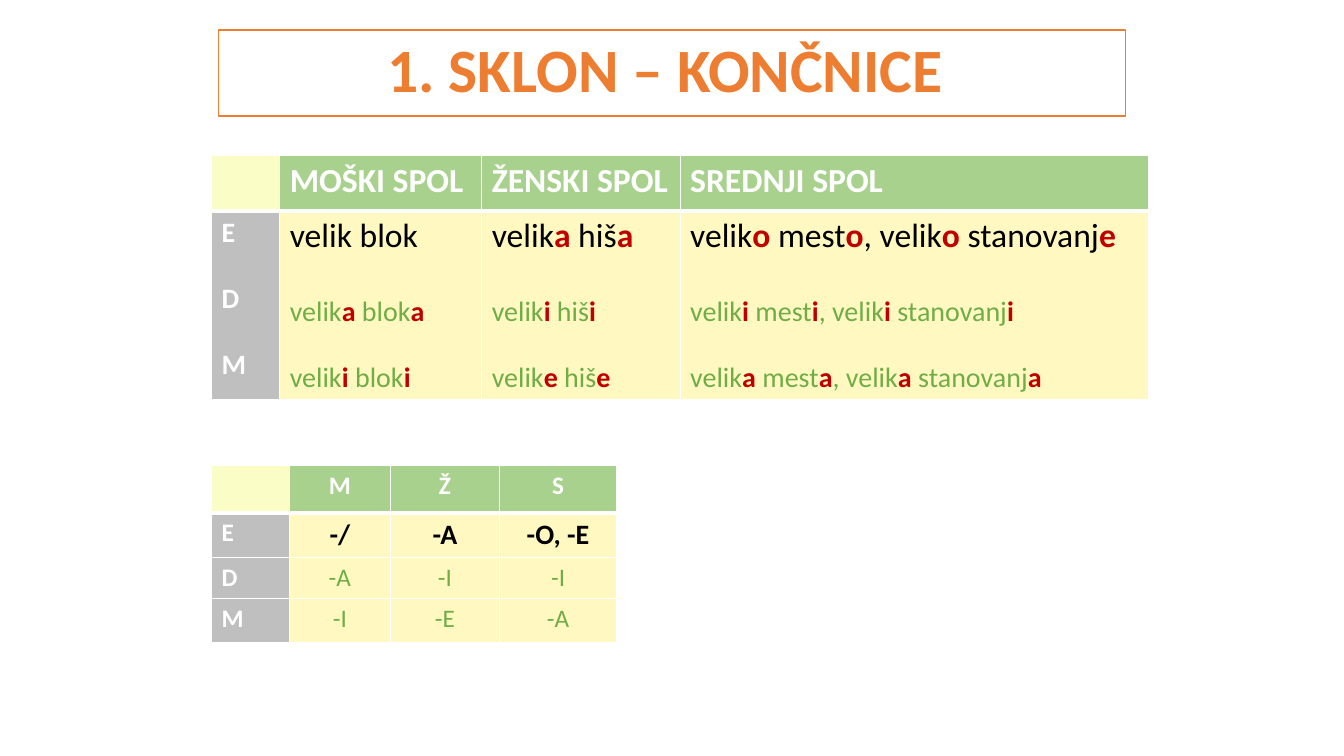
from lxml.etree import SubElement as Sub
from pptx import Presentation as Deck
from pptx.dml.color import RGBColor as Rgb
from pptx.enum.text import MSO_ANCHOR as Anchor, MSO_AUTO_SIZE as Fit, PP_ALIGN as Align
from pptx.oxml.ns import qn
from pptx.util import Cm, Pt

HUES = {
    "white": "FFFFFF", "black": "000000", "orange": "ED7D31", "red": "C00000",
    "green": "70AD47", "head": "A9D18E", "side": "BFBFBF", "body": "FFF8C1",
    "corner": "FAFEC6",
}
CASES = [
    ["", "MOŠKI SPOL", "ŽENSKI SPOL", "SREDNJI SPOL"],
    ["E\nD\nM",
     "velik blok\nvelik*a* blok*a*\nvelik*i* blok*i*",
     "velik*a* hiš*a*\nvelik*i* hiš*i*\nvelik*e* hiš*e*",
     "velik*o* mest*o*, velik*o* stanovanj*e*\n"
     "velik*i* mest*i*, velik*i *stanovanj*i*\n"
     "velik*a* mest*a*, velik*a* stanovanj*a*"],
]
ENDS = [
    ["", "M", "Ž", "S"],
    ["E", "-/", "-A", "-O, -E"],
    ["D", "-A", "-I", "-I"],
    ["M", "-I", "-E", "-A"],
]


def hue(name):
    return Rgb.from_string(HUES[name])


def put(item, **vals):
    for key, val in vals.items():
        setattr(item, key, val)


def paint(item, name):
    item.fill.solid()
    item.fill.fore_color.rgb = hue(name)


def write(para, text, size, color, bold):
    for i, part in enumerate(text.split("*")):
        if part:
            run = para.add_run()
            run.text = part
            mark = i % 2 == 1
            put(run.font, name="Calibri", size=Pt(size), bold=bold or mark)
            run.font.color.rgb = hue("red" if mark else color)


def edge(cell, base):
    props = cell._tc.get_or_add_tcPr()
    for side in "LRTB":
        width = base if side == "B" else 0.96
        line = Sub(props, qn(f"a:ln{side}"), w=str(int(Pt(width))))
        Sub(Sub(line, qn("a:solidFill")), qn("a:srgbClr"), val=HUES["white"])


def fill(cell, text, looks, gaps, align):
    for i, row in enumerate(text.split("\n")):
        frame = cell.text_frame
        para = frame.add_paragraph() if i else frame.paragraphs[0]
        para.alignment = align
        if i:
            para.space_before = Pt(gaps[i - 1])
        write(para, row, *looks[i])


def grid(slide, data, left, top, wides, highs, look):
    table = slide.shapes.add_table(
        len(highs), len(wides), Cm(left), Cm(top), Cm(sum(wides)), Cm(sum(highs))
    ).table
    for col, wide in zip(table.columns, wides):
        col.width = Cm(wide)
    for row, high in zip(table.rows, highs):
        row.height = Cm(high)
    for r, texts in enumerate(data):
        for c, text in enumerate(texts):
            cell = table.cell(r, c)
            edge(cell, 0.96 if r else 3)
            kind = ("body" if c else "side") if r else ("head" if c else "corner")
            paint(cell, kind)
            if text:
                fill(cell, text, *look(r, c))


def case_look(r, c):
    if r and c:
        small = (20, "green", False)
        return [(24, "black", False), small, small], (27, 22.5), Align.LEFT
    return [(20 if r else 24, "white", True)] * 3, (22.5, 22.5), Align.LEFT


def end_look(r, c):
    if not r or not c:
        look = (18, "white", True)
    else:
        look = (20, "black", True) if r == 1 else (18, "green", False)
    return [look], (), Align.CENTER if c else Align.LEFT


def head(slide, text):
    box = slide.shapes.title
    put(box, left=Cm(5.51), top=Cm(0.76), width=Cm(22.86), height=Cm(2.16))
    paint(box, "white")
    box.line.color.rgb = hue("orange")
    box.line.width = Pt(1)
    put(box.text_frame, word_wrap=True, auto_size=Fit.NONE,
        vertical_anchor=Anchor.MIDDLE)
    para = box.text_frame.paragraphs[0]
    put(para, alignment=Align.CENTER, line_spacing=0.9)
    write(para, text, 44, "orange", True)


def main():
    deck = Deck()
    put(deck, slide_width=Cm(33.87), slide_height=Cm(19.05))
    slide = deck.slides.add_slide(deck.slide_layouts[5])
    grid(slide, ENDS, 5.33, 11.73, [1.96, 2.55, 2.75, 2.95],
         [1.19, 1.04, 1.04, 1.11], end_look)
    grid(slide, CASES, 5.33, 3.91, [1.72, 5.09, 5, 11.8],
         [1.4, 3.99], case_look)
    head(slide, "1. SKLON – KONČNICE ")
    deck.save("out.pptx")


if __name__ == "__main__":
    main()
